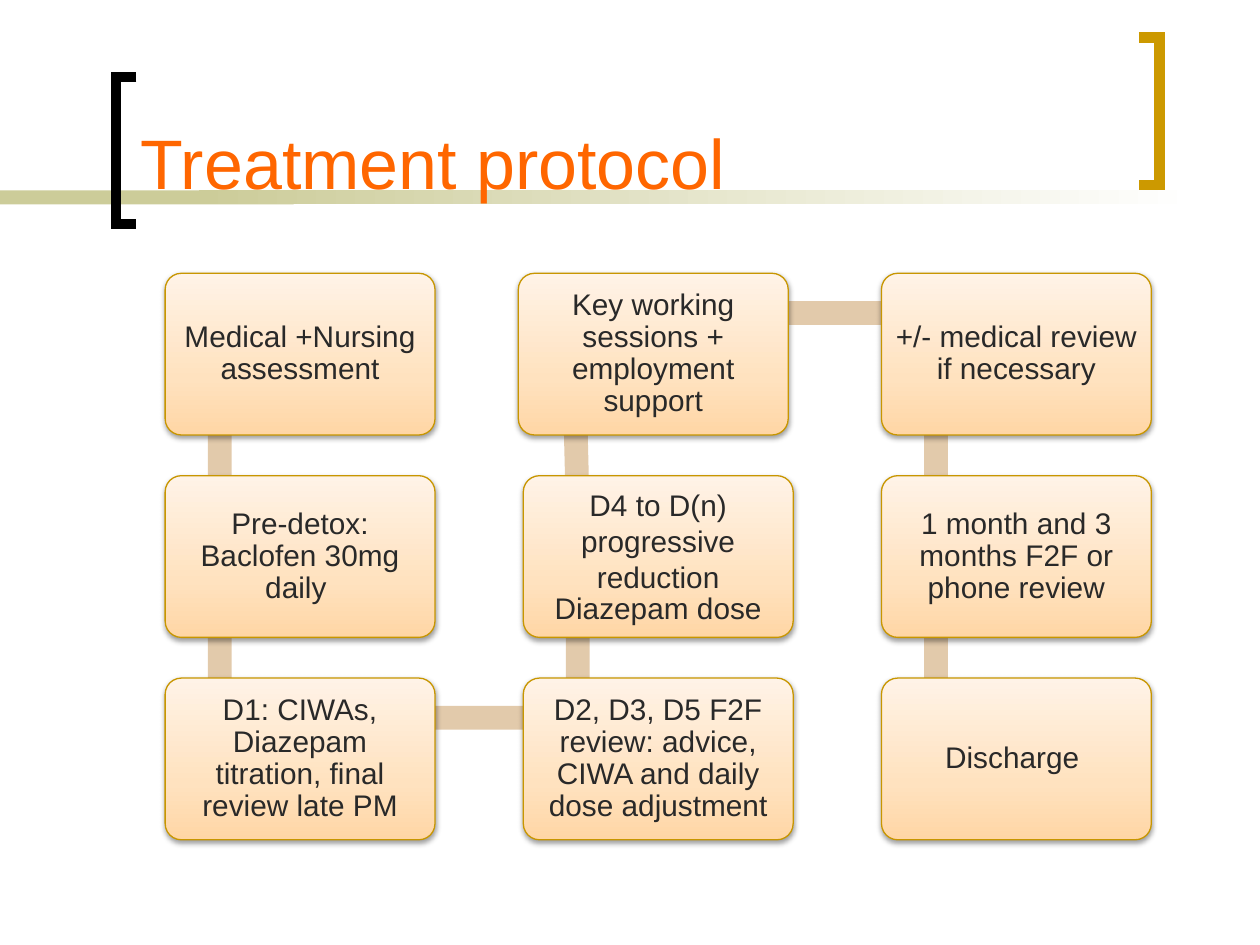
from dataclasses import dataclass
from math import atan2, degrees, hypot

from lxml import etree
from pptx import Presentation
from pptx.dml.color import RGBColor
from pptx.enum.shapes import MSO_SHAPE
from pptx.enum.text import MSO_ANCHOR, PP_ALIGN
from pptx.oxml.ns import qn
from pptx.shapes.autoshape import Shape
from pptx.shapes.shapetree import SlideShapes
from pptx.util import Cm, Pt

RECT = MSO_SHAPE.RECTANGLE
ROUND = MSO_SHAPE.ROUNDED_RECTANGLE
MIDDLE = MSO_ANCHOR.MIDDLE
BOTTOM = MSO_ANCHOR.BOTTOM
CENTER = PP_ALIGN.CENTER


@dataclass(frozen=True)
class Theme:
    font: str = "Arial"
    head: int = 40
    body: int = 17
    title: str = "FF6600"
    ink: str = "292929"
    link: str = "E2CAAB"
    edge: str = "C89600"
    band: str = "CCCC99"
    paper: str = "FFFFFF"
    black: str = "000000"
    gold: str = "CC9900"
    card: tuple[tuple[int, str], ...] = (
        (0, "FFD6A5"), (35, "FFE2BF"), (100, "FFF3E7"))


@dataclass(frozen=True)
class Step:
    col: int
    row: int
    lines: tuple[str, ...]
    shift: float = 0

    @property
    def left(self) -> float:
        return 3.33 + 7.22 * self.col + self.shift

    @property
    def top(self) -> float:
        return 5.51 + 4.08 * self.row

    @property
    def joint(self) -> tuple[float, float]:
        return self.left + 1.1, self.top + 0.8


@dataclass(frozen=True)
class Bracket:
    spine: float
    tip: float
    top: float
    color: str


THEME = Theme()
WIDE, HIGH = 5.44, 3.26
THICK = 0.48
STEPS = (
    Step(0, 0, ("Medical +Nursing assessment",)),
    Step(0, 1, ("Pre-detox: Baclofen 30mg daily ",)),
    Step(0, 2, ("D1: CIWAs, Diazepam titration, final review late PM",)),
    Step(1, 2, ("D2, D3, D5 F2F review: advice, CIWA and daily dose adjustment",)),
    Step(1, 1, ("D4 to D(n) progressive reduction", "Diazepam dose")),
    Step(1, 0, ("Key working sessions + employment support",), -0.1),
    Step(2, 0, ("+/- medical review if necessary",)),
    Step(2, 1, ("1 month and 3 months F2F or phone review",)),
    Step(2, 2, ("Discharge ",)),
)
BRACKETS = (
    Bracket(2.34, 2.75, 1.55, THEME.black),
    Bracket(23.37, 22.96, 0.76, THEME.gold),
)


def rgb(code: str) -> RGBColor:
    return RGBColor.from_string(code)


def shade(shape: Shape, stops: tuple[tuple[int, str], ...], angle: int) -> None:
    shape.fill.gradient()
    shape.fill.gradient_angle = angle
    items = shape.element.spPr.find(qn("a:gradFill")).find(qn("a:gsLst"))
    for old in list(items):
        items.remove(old)
    for pos, code in stops:
        stop = etree.SubElement(items, qn("a:gs"), pos=str(pos * 1000))
        etree.SubElement(stop, qn("a:srgbClr"), val=code)


def drop(shape: Shape) -> None:
    effects = shape.element.spPr.find(qn("a:effectLst"))
    shadow = etree.SubElement(
        effects, qn("a:outerShdw"), blurRad=str(Pt(3.1)), dist=str(Pt(1.6)),
        dir="5400000", rotWithShape="0")
    color = etree.SubElement(shadow, qn("a:srgbClr"), val=THEME.black)
    etree.SubElement(color, qn("a:alpha"), val="38000")


def add_bar(shapes: SlideShapes, left: float, top: float,
            width: float, height: float, color: str) -> Shape:
    bar = shapes.add_shape(RECT, Cm(left), Cm(top), Cm(width), Cm(height))
    bar.shadow.inherit = False
    bar.fill.solid()
    bar.fill.fore_color.rgb = rgb(color)
    bar.line.fill.background()
    return bar


def add_link(shapes: SlideShapes, start: Step, end: Step) -> None:
    (x1, y1), (x2, y2) = start.joint, end.joint
    size = hypot(x2 - x1, y2 - y1)
    bar = add_bar(shapes, (x1 + x2 - size) / 2, (y1 + y2 - THICK) / 2,
                  size, THICK, THEME.link)
    bar.rotation = degrees(atan2(y2 - y1, x2 - x1))


def add_card(shapes: SlideShapes, step: Step) -> None:
    card = shapes.add_shape(ROUND, Cm(step.left), Cm(step.top), Cm(WIDE), Cm(HIGH))
    card.adjustments[0] = 0.1
    card.shadow.inherit = False
    shade(card, THEME.card, 90)
    card.line.color.rgb = rgb(THEME.edge)
    card.line.width = Pt(0.75)
    drop(card)
    frame = card.text_frame
    frame.word_wrap = True
    frame.vertical_anchor = MIDDLE
    frame.margin_left = frame.margin_right = Cm(0.18)
    frame.margin_top = frame.margin_bottom = Cm(0.18)
    frame.text = "\n".join(step.lines)
    for para in frame.paragraphs:
        para.alignment = CENTER
        para.font.name = THEME.font
        para.font.size = Pt(THEME.body)
        para.font.color.rgb = rgb(THEME.ink)
    frame.paragraphs[-1].line_spacing = 0.9


def add_bracket(shapes: SlideShapes, item: Bracket) -> None:
    low = item.top + 2.97
    pen = shapes.build_freeform(Cm(item.tip), Cm(item.top))
    pen.add_line_segments(
        [(Cm(item.spine), Cm(item.top)), (Cm(item.spine), Cm(low)),
         (Cm(item.tip), Cm(low))], close=False)
    shape = pen.convert_to_shape()
    shape.shadow.inherit = False
    shape.fill.background()
    shape.line.color.rgb = rgb(item.color)
    shape.line.width = Pt(6)
    edge = shape.element.spPr.find(qn("a:ln"))
    etree.SubElement(edge, qn("a:miter"), lim="800000")


def add_title(shapes: SlideShapes, text: str) -> None:
    frame = shapes.add_textbox(Cm(2.59), Cm(0.28), Cm(19.89), Cm(3.94)).text_frame
    frame.word_wrap = True
    frame.vertical_anchor = BOTTOM
    frame.text = text
    font = frame.paragraphs[0].font
    font.name = THEME.font
    font.size = Pt(THEME.head)
    font.color.rgb = rgb(THEME.title)


def main() -> None:
    deck = Presentation()
    deck.slide_width, deck.slide_height = Cm(25.4), Cm(19.05)
    shapes = deck.slides.add_slide(deck.slide_layouts[6]).shapes
    add_bar(shapes, 0, 3.84, 5.92, 0.28, THEME.band)
    fade = add_bar(shapes, 4.01, 3.84, 20.12, 0.28, THEME.band)
    shade(fade, ((0, THEME.band), (100, THEME.paper)), 0)
    for item in BRACKETS:
        add_bracket(shapes, item)
    add_title(shapes, "Treatment protocol")
    for step, after in zip(STEPS, STEPS[1:]):
        add_link(shapes, step, after)
        add_card(shapes, step)
    add_card(shapes, STEPS[-1])
    deck.save("out.pptx")


if __name__ == "__main__":
    main()
